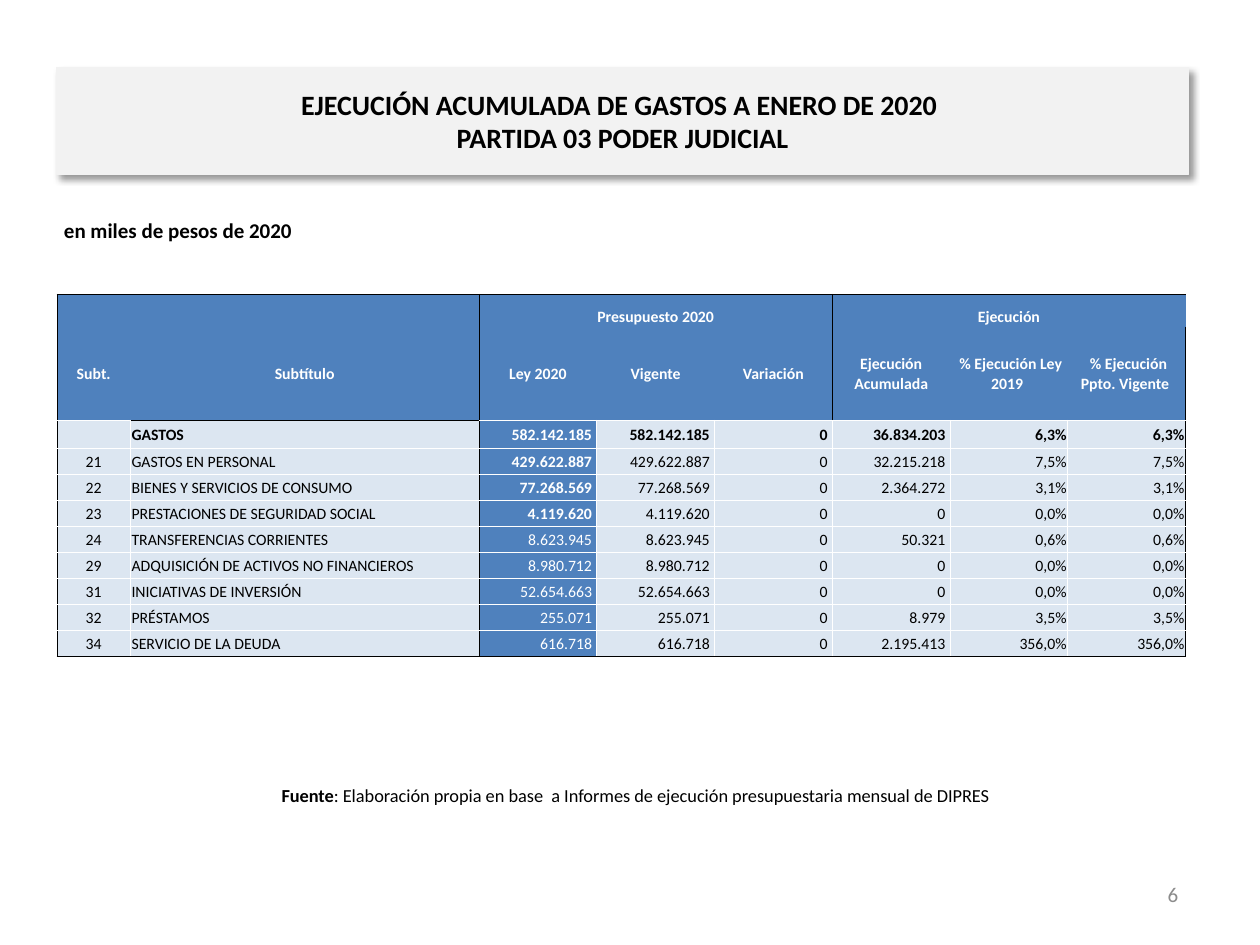
from lxml import etree
from pptx import Presentation
from pptx.dml.color import RGBColor
from pptx.enum.shapes import MSO_SHAPE
from pptx.enum.text import MSO_ANCHOR, PP_ALIGN
from pptx.oxml import parse_xml
from pptx.oxml.ns import nsdecls, qn
from pptx.util import Pt

RECT = MSO_SHAPE.RECTANGLE
TOP, MIDDLE, BOTTOM = MSO_ANCHOR.TOP, MSO_ANCHOR.MIDDLE, MSO_ANCHOR.BOTTOM
LEFT, CENTER, RIGHT = PP_ALIGN.LEFT, PP_ALIGN.CENTER, PP_ALIGN.RIGHT
JUSTIFY = PP_ALIGN.JUSTIFY

BLACK, WHITE, GRAY = "000000", "FFFFFF", "8C8C8C"
PANEL, BLUE, PALE = "F2F2F2", "4F81BD", "DCE6F1"

WIDTHS = [41.9, 199.2] + [67.3] * 6
HEIGHTS = [18.5, 53.5, 16] + [14.86] * 8
GROUPS = ["", "", "Presupuesto 2020", "", "", "Ejecución", "", ""]
HEADS = ["Subt.", "Subtítulo", "Ley 2020", "Vigente", "Variación",
         "Ejecución Acumulada", " % Ejecución Ley 2019 ", " % Ejecución Ppto. Vigente "]
ITEMS = [
    ("", "GASTOS", "582.142.185", "36.834.203", "6,3%"),
    ("21", "GASTOS EN PERSONAL", "429.622.887", "32.215.218", "7,5%"),
    ("22", "BIENES Y SERVICIOS DE CONSUMO", "77.268.569", "2.364.272", "3,1%"),
    ("23", "PRESTACIONES DE SEGURIDAD SOCIAL", "4.119.620", "0", "0,0%"),
    ("24", "TRANSFERENCIAS CORRIENTES", "8.623.945", "50.321", "0,6%"),
    ("29", "ADQUISICIÓN DE ACTIVOS NO FINANCIEROS", "8.980.712", "0", "0,0%"),
    ("31", "INICIATIVAS DE INVERSIÓN", "52.654.663", "0", "0,0%"),
    ("32", "PRÉSTAMOS", "255.071", "8.979", "3,5%"),
    ("34", "SERVICIO DE LA DEUDA", "616.718", "2.195.413", "356,0%"),
]


def paint(color, code):
    """Set a color from a hex string."""
    color.rgb = RGBColor.from_string(code)


def edges(row, col, last):
    """Return the border colors of a cell, left, right, top and bottom."""
    head = row < 2
    inner = None if head else WHITE
    left = BLACK if col in (0, 2) or head and col == 5 else inner
    right = BLACK if col in (1, 7) or head and col == 4 else inner
    top = BLACK if row == 0 or (row, col) == (2, 1) else inner
    low = BLACK if row == last or (row, col) == (1, 1) else WHITE if row else None
    return left, right, top, low


class Deck:
    """Hold the style and the current slide."""

    def __init__(self, font):
        """Start a deck with one blank slide."""
        self.font = font
        self.file = Presentation()
        self.file.slide_width, self.file.slide_height = Pt(720), Pt(540)
        self.slide = self.file.slides.add_slide(self.file.slide_layouts[6])

    def style(self, para, size, color, bold, align):
        """Set the font and alignment of a paragraph."""
        para.alignment = align
        para.font.name, para.font.size, para.font.bold = self.font, Pt(size), bold
        paint(para.font.color, color)

    def text(self, box, parts, size, color=BLACK, bold=False, align=LEFT, anchor=MIDDLE):
        """Add a text box of (text, bold) parts."""
        frame = self.slide.shapes.add_textbox(*map(Pt, box)).text_frame
        frame.word_wrap, frame.vertical_anchor = True, anchor
        para = frame.paragraphs[0]
        self.style(para, size, color, bold, align)
        for words, heavy in parts:
            run = para.add_run()
            run.text = words
            if heavy != bold:
                run.font.bold = heavy

    def banner(self, box, words, size):
        """Add a shaded title panel with a soft shadow."""
        shape = self.slide.shapes.add_shape(RECT, *map(Pt, box))
        shape.fill.solid()
        paint(shape.fill.fore_color, PANEL)
        paint(shape.line.color, PANEL)
        shape.line.width = Pt(0.75)
        shape.shadow.inherit = False
        glow = shape._element.spPr.find(qn("a:effectLst"))
        glow.append(parse_xml(
            f'<a:outerShdw {nsdecls("a")} blurRad="{Pt(4)}" dist="{Pt(3)}" dir="2700000" '
            f'algn="tl" rotWithShape="0"><a:srgbClr val="{BLACK}">'
            '<a:alpha val="40000"/></a:srgbClr></a:outerShdw>'))
        frame = shape.text_frame
        frame.word_wrap, frame.vertical_anchor = True, MIDDLE
        para = frame.paragraphs[0]
        para.text = words
        self.style(para, size, BLACK, True, CENTER)

    def border(self, cell, colors):
        """Draw the four sides of a cell; None leaves a side empty."""
        props = cell._tc.get_or_add_tcPr()
        for side, code in zip(("lnL", "lnR", "lnT", "lnB"), colors):
            line = etree.SubElement(props, qn(f"a:{side}"), w=str(Pt(0.5)))
            if code:
                fill = etree.SubElement(line, qn("a:solidFill"))
                etree.SubElement(fill, qn("a:srgbClr"), val=code)
            else:
                etree.SubElement(line, qn("a:noFill"))

    def cell(self, cell, words, fill, color, bold, align, anchor):
        """Fill one table cell."""
        cell.margin_left = cell.margin_right = cell.margin_top = Pt(0.7)
        cell.margin_bottom = 0
        cell.vertical_anchor = anchor
        cell.fill.solid()
        paint(cell.fill.fore_color, fill)
        para = cell.text_frame.paragraphs[0]
        para.text = words
        self.style(para, 9, color, bold, align)

    def table(self, left, top, rows):
        """Add the budget table with its two header rows."""
        last = len(rows) - 1
        frame = self.slide.shapes.add_table(
            len(rows), len(WIDTHS), Pt(left), Pt(top), Pt(sum(WIDTHS)), Pt(sum(HEIGHTS)))
        grid = frame.table
        grid.first_row = grid.horz_banding = False
        for col, width in zip(grid.columns, WIDTHS):
            col.width = Pt(width)
        for row, height in zip(grid.rows, HEIGHTS):
            row.height = Pt(height)
        for r, row in enumerate(rows):
            for c, words in enumerate(row):
                head, law = r < 2, c == 2
                blue = head or law
                name = LEFT if r == 2 else JUSTIFY
                align = CENTER if head or c == 0 else name if c == 1 else RIGHT
                bold = r < 3 or law and r < 6
                cell = grid.cell(r, c)
                self.border(cell, edges(r, c, last))
                self.cell(cell, words, BLUE if blue else PALE, WHITE if blue else BLACK,
                          bold, align, BOTTOM if r == 0 else MIDDLE)
        for c in (2, 5):
            grid.cell(0, c).merge(grid.cell(0, c + 2))


def main():
    """Build the slide and save it."""
    deck = Deck("Calibri")
    deck.text((32.4, 440, 661.7, 28.8),
              [("Fuente", True), (": Elaboración propia en base  a Informes de ejecución "
                                  "presupuestaria mensual de DIPRES", False)],
              10.5, align=CENTER)
    deck.text((512.6, 496.8, 167.8, 28.8), [("6", False)], 12, GRAY, align=RIGHT)
    deck.text((29.5, 121, 648, 36), [("en miles de pesos de 2020", True)],
              12, bold=True, anchor=TOP)
    deck.banner((32.4, 38.4, 646.6, 61.2),
                "EJECUCIÓN ACUMULADA DE GASTOS A ENERO DE 2020 \vPARTIDA 03 PODER JUDICIAL", 16)
    rows = [GROUPS, HEADS]
    for code, name, law, spent, share in ITEMS:
        rows.append([code, name, f"{law} ", f"{law} ", "0 ", f"{spent} ", share, share])
    deck.table(32.6, 168.2, rows)
    deck.file.save("out.pptx")


if __name__ == "__main__":
    main()
